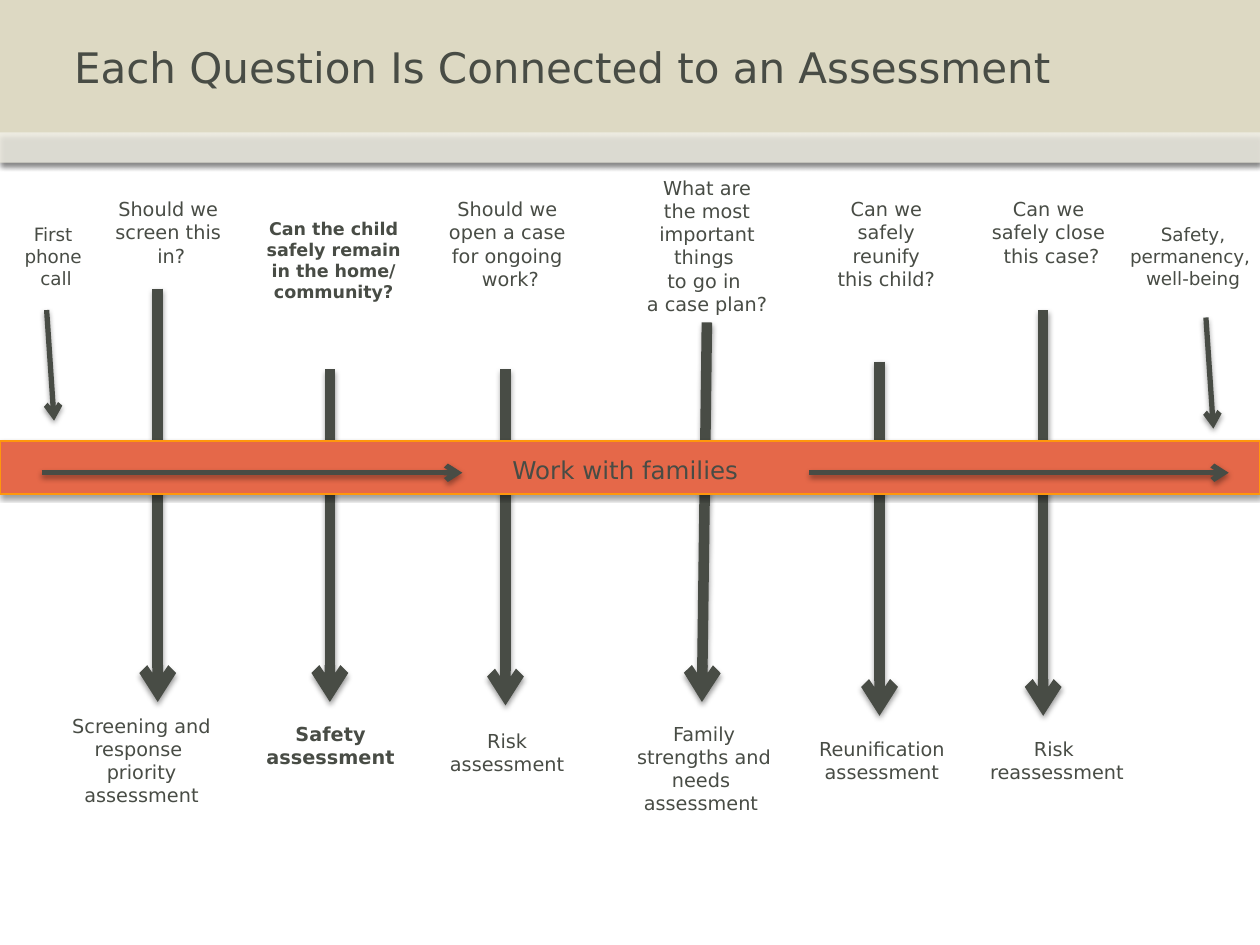
from lxml import etree
from pptx import Presentation
from pptx.dml.color import RGBColor
from pptx.enum.shapes import MSO_CONNECTOR, MSO_SHAPE
from pptx.enum.text import MSO_ANCHOR, MSO_AUTO_SIZE, PP_ALIGN
from pptx.oxml import parse_xml
from pptx.oxml.ns import nsdecls, qn
from pptx.util import Cm, Pt

RECTANGLE, STRAIGHT = MSO_SHAPE.RECTANGLE, MSO_CONNECTOR.STRAIGHT
LEFT, CENTER = PP_ALIGN.LEFT, PP_ALIGN.CENTER
TOP, MIDDLE = MSO_ANCHOR.TOP, MSO_ANCHOR.MIDDLE
FIT_SHAPE, NO_FIT = MSO_AUTO_SIZE.SHAPE_TO_FIT_TEXT, MSO_AUTO_SIZE.NONE

WIDTH, HEIGHT = 25.4, 19.05
FONT = "DejaVu Sans"
COLORS = {
    "ink": "484C45",
    "header": "DDD9C3",
    "veil": "FFFFFF",
    "work": "E56849",
    "work_edge": "FF970C",
    "shadow": "000000",
}
HEADER_SHADOW = {"alpha": 35, "distance": 1.8}
BODY_SHADOW = {"alpha": 38, "distance": 1.6}


def rgb(name):
    return RGBColor.from_string(COLORS[name])


class SlideBuilder:
    """Holds the text style and the current slide."""

    def __init__(self, slide):
        self.slide = slide
        self.shapes = slide.shapes

    def shadow(self, item, alpha, distance):
        item._element.spPr.append(parse_xml(
            f'<a:effectLst {nsdecls("a")}>'
            f'<a:outerShdw blurRad="{Pt(3.1)}" dist="{Pt(distance)}" '
            'dir="5400000" rotWithShape="0">'
            f'<a:srgbClr val="{COLORS["shadow"]}">'
            f'<a:alpha val="{alpha * 1000}"/></a:srgbClr>'
            '</a:outerShdw></a:effectLst>'))

    def band(self, top, height, fill, shadow, edge=None, opacity=None):
        band = self.shapes.add_shape(
            RECTANGLE, 0, Cm(top), Cm(WIDTH), Cm(height))
        band.fill.solid()
        band.fill.fore_color.rgb = rgb(fill)
        if opacity:
            color = band._element.spPr.find(qn("a:solidFill"))[0]
            etree.SubElement(color, qn("a:alpha"), val=str(opacity * 1000))
        if edge:
            band.line.color.rgb = rgb(edge)
            band.line.width = Pt(0.75)
        else:
            band.line.fill.background()
        self.shadow(band, **shadow)

    def arrow(self, start, end, width):
        points = [Cm(value) for value in (*start, *end)]
        arrow = self.shapes.add_connector(STRAIGHT, *points)
        arrow.line.color.rgb = rgb("ink")
        arrow.line.width = Pt(width)
        etree.SubElement(arrow._element.spPr.find(qn("a:ln")),
                         qn("a:tailEnd"), type="arrow")
        self.shadow(arrow, **BODY_SHADOW)

    def fill_text(self, frame, text, size, bold=False, align=CENTER,
                  **frame_format):
        frame.text = text
        for name, value in frame_format.items():
            setattr(frame, name, value)
        font_format = {"name": FONT, "size": Pt(size), "bold": bold}
        for paragraph in frame.paragraphs:
            paragraph.alignment = align
            for run in paragraph.runs:
                for name, value in font_format.items():
                    setattr(run.font, name, value)
                run.font.color.rgb = rgb("ink")

    def title(self, text, *box):
        title = self.shapes.title
        # Bring the title in front of the header bands
        self.shapes._spTree.append(title._element)
        title.left, title.top, title.width, title.height = map(Cm, box)
        self.fill_text(title.text_frame, text, 24, align=LEFT, word_wrap=True,
                       vertical_anchor=MIDDLE, auto_size=NO_FIT)

    def label(self, text, box, size=11, bold=False, wrap=False, align=CENTER):
        label = self.shapes.add_textbox(*map(Cm, box))
        self.fill_text(label.text_frame, text, size, bold, align,
                       word_wrap=wrap, vertical_anchor=TOP,
                       auto_size=FIT_SHAPE)


def main():
    deck = Presentation()
    deck.slide_width, deck.slide_height = Cm(WIDTH), Cm(HEIGHT)
    builder = SlideBuilder(deck.slides.add_slide(deck.slide_layouts[5]))

    # Header
    builder.band(0, 3.28, "header", HEADER_SHADOW)
    builder.band(2.67, 0.61, "veil", HEADER_SHADOW, opacity=53)
    builder.title("Each Question Is Connected to an Assessment",
                  1.24, 0, 23.93, 2.67)

    # Arrows from each question to its assessment
    question_arrows = [
        ((21.03, 6.25), (21.03, 14.43)),
        ((17.73, 7.29), (17.73, 14.43)),
        ((14.25, 6.5), (14.15, 14.15)),
        ((10.19, 7.44), (10.19, 14.22)),
        ((6.65, 7.44), (6.65, 14.15)),
        ((3.18, 5.82), (3.18, 14.15)),
    ]
    for start, end in question_arrows:
        builder.arrow(start, end, 6)

    # Work band
    builder.band(8.89, 1.07, "work", BODY_SHADOW, edge="work_edge")
    builder.label("Work with families", (10.08, 9.04, 7.44, 0.86),
                  size=14, wrap=True, align=LEFT)

    # Flow along the band, then its entry and exit
    flow_arrows = [
        ((16.31, 9.53), (24.77, 9.53)),
        ((0.84, 9.53), (9.32, 9.53)),
        ((0.94, 6.25), (1.09, 8.48)),
        ((24.31, 6.4), (24.46, 8.64)),
    ]
    for start, end in flow_arrows:
        builder.arrow(start, end, 3)

    # Start and outcome
    builder.label("First \nphone \ncall", (0.23, 4.37, 1.8, 1.6), size=10.5)
    builder.label("Safety,\npermanency, \nwell-being",
                  (22.5, 4.37, 3.1, 1.6), size=10.5)

    # Questions
    questions = [
        ("Should we \nscreen this \nin?", (2.06, 3.86, 2.79, 1.68)),
        ("Should we \nopen a case \nfor ongoing \nwork?",
         (8.79, 3.86, 3, 2.13)),
        ("What are\n the most \nimportant\nthings \nto go in \na case plan?",
         (12.78, 3.43, 2.95, 3.07)),
        ("Can we \nsafely \nreunify \nthis child? ",
         (16.61, 3.86, 2.64, 2.13)),
        ("Can we \nsafely close \nthis case?", (19.74, 3.86, 2.92, 1.68)),
    ]
    for text, box in questions:
        builder.label(text, box)
    builder.label("Can the child\nsafely remain\nin the home/\ncommunity?",
                  (5.11, 4.27, 3.23, 1.96), size=10, bold=True)

    # Assessments
    assessments = [
        ("Screening and\nresponse \npriority\nassessment",
         (1.19, 14.27, 3.33, 2.13), False),
        ("Risk\nassessment", (8.36, 14.58, 3.73, 1.19), True),
        ("Family\nstrengths and\nneeds \nassessment ",
         (12.57, 14.43, 3.25, 2.13), False),
        ("Reunification\vassessment", (15.24, 14.73, 5.08, 1.19), True),
        ("Risk \vreassessment", (18.77, 14.73, 5.08, 1.19), True),
    ]
    for text, box, wrap in assessments:
        builder.label(text, box, wrap=wrap)
    builder.label("Safety\nassessment", (4.8, 14.43, 3.73, 1.19),
                  bold=True, wrap=True)

    deck.save("out.pptx")


if __name__ == "__main__":
    main()
